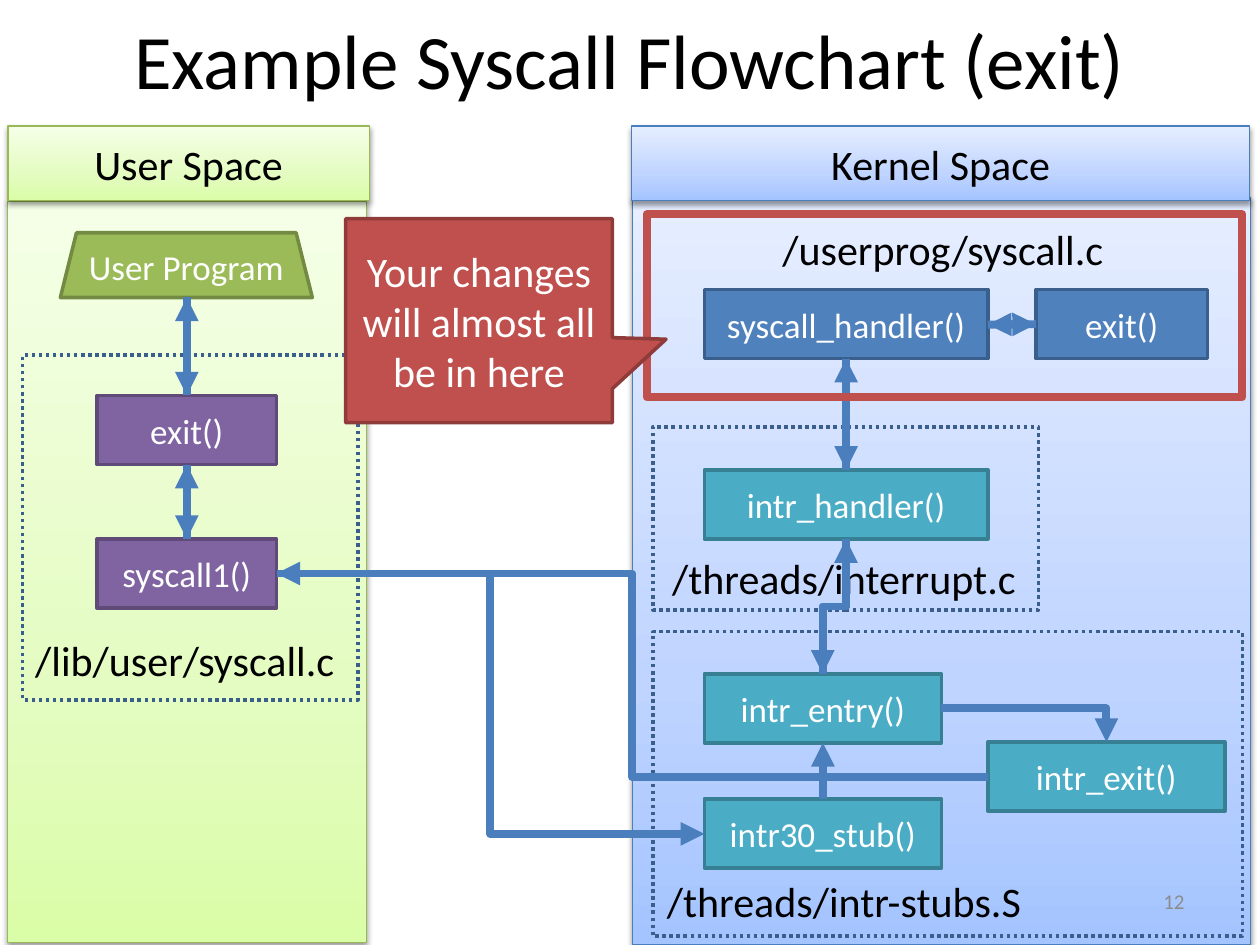
from copy import deepcopy
from lxml import etree
from pptx import Presentation
from pptx.dml.color import RGBColor
from pptx.enum.dml import MSO_LINE
from pptx.enum.shapes import MSO_CONNECTOR, MSO_SHAPE
from pptx.enum.text import MSO_ANCHOR, MSO_AUTO_SIZE, PP_ALIGN
from pptx.oxml.ns import qn
from pptx.util import Pt

RECT = MSO_SHAPE.RECTANGLE
TRAP = MSO_SHAPE.TRAPEZOID
CALL = MSO_SHAPE.RECTANGULAR_CALLOUT
LINE = MSO_CONNECTOR.STRAIGHT
BENT = MSO_CONNECTOR.ELBOW
DOTS = MSO_LINE.ROUND_DOT
MID, TOP = MSO_ANCHOR.MIDDLE, MSO_ANCHOR.TOP
LEFT, MIDST, RIGHT = PP_ALIGN.LEFT, PP_ALIGN.CENTER, PP_ALIGN.RIGHT
FIT = MSO_AUTO_SIZE.SHAPE_TO_FIT_TEXT

BLACK = RGBColor(0x00, 0x00, 0x00)
WHITE = RGBColor(0xFF, 0xFF, 0xFF)
GREY = RGBColor(0x8C, 0x8C, 0x8C)
WIRE = RGBColor(0x4B, 0x7E, 0xBC)
LEAF = RGBColor(0x98, 0xB9, 0x55)
GREEN = (RGBColor(0x9B, 0xBB, 0x59), RGBColor(0x73, 0x8A, 0x42))
PLUM = (RGBColor(0x80, 0x64, 0xA2), RGBColor(0x5F, 0x4A, 0x78))
TEAL = (RGBColor(0x4B, 0xAC, 0xC6), RGBColor(0x37, 0x7F, 0x92))
BLUE = (RGBColor(0x4F, 0x81, 0xBD), RGBColor(0x3A, 0x5F, 0x8C))
RED = (RGBColor(0xC0, 0x50, 0x4D), RGBColor(0x8E, 0x3B, 0x39))
LIME = (RGBColor(0xDA, 0xFD, 0xA7), RGBColor(0xE4, 0xFC, 0xC2), RGBColor(0xF5, 0xFF, 0xE7))
SKY = (RGBColor(0xA4, 0xC4, 0xFF), RGBColor(0xBF, 0xD4, 0xFF), RGBColor(0xE6, 0xEE, 0xFF))
STOPS = (0, 0.35, 1)

USER_X, KERN_X = 106.75, 483.5
STUB_X, COL = 470.25, 402.5
TALL = 39.5


def pts(vals):
    return [Pt(v) for v in vals]


def put(item, vals):
    for name, val in vals.items():
        setattr(item, name, val)


def write(frame, text, size, tint=WHITE, align=MIDST, anchor=MID, wrap=True):
    frame.text = text
    put(frame, {"word_wrap": wrap, "vertical_anchor": anchor})
    para = frame.paragraphs[0]
    para.alignment = align
    put(para.runs[0].font, {"name": "Calibri", "size": Pt(size)})
    para.runs[0].font.color.rgb = tint


def shape(slide, at, edge, width, kind=RECT):
    item = slide.shapes.add_shape(kind, *pts(at))
    item.shadow.inherit = False
    item.line.color.rgb = edge
    item.line.width = Pt(width)
    return item


def box(slide, text, at, hues, size=20, kind=RECT):
    item = shape(slide, at, hues[1], 2, kind)
    item.fill.solid()
    item.fill.fore_color.rgb = hues[0]
    write(item.text_frame, text, size)
    return item


def frame(slide, at, edge, width, dash=None):
    item = shape(slide, at, edge, width)
    item.fill.background()
    item.line.dash_style = dash


def panel(slide, at, tints, edge, text=None):
    item = shape(slide, at, edge, 0.75)
    item.fill.gradient()
    item.fill.gradient_angle = 90
    props = item._element.spPr
    stops = props.find(".//" + qn("a:gsLst"))
    stops.append(deepcopy(stops[0]))
    for stop, place, tint in zip(item.fill.gradient_stops, STOPS, tints):
        stop.position = place
        stop.color.rgb = tint
    glow = etree.SubElement(
        props.find(qn("a:effectLst")), qn("a:outerShdw"),
        blurRad=str(Pt(3.1)), dist=str(Pt(1.6)), dir="5400000", rotWithShape="0")
    shade = etree.SubElement(glow, qn("a:srgbClr"), val="000000")
    etree.SubElement(shade, qn("a:alpha"), val="38000")
    if text:
        write(item.text_frame, text, 24, BLACK)


def label(slide, text, at):
    item = slide.shapes.add_textbox(*pts(at))
    write(item.text_frame, text, 24, BLACK, LEFT, TOP, False)
    item.text_frame.auto_size = FIT


def link(slide, start, end, kind=LINE, turn=0, form=None):
    item = slide.shapes.add_connector(kind, *pts(start + end))
    put(item.line, {"width": Pt(4.5)})
    item.line.color.rgb = WIRE
    props = item._element.spPr
    etree.SubElement(item.line._get_or_add_ln(), qn("a:tailEnd"), type="triangle")
    etree.SubElement(props, qn("a:effectLst"))
    if turn:
        props.find(qn("a:xfrm")).set("rot", str(turn * 60000))
    if form:
        props.find(qn("a:prstGeom")).set("prst", form)


def both(slide, start, end, kind=LINE, turn=0):
    link(slide, start, end, kind, turn)
    link(slide, end, start, kind, turn)


def main():
    deck = Presentation()
    put(deck, {"slide_width": Pt(720), "slide_height": Pt(540)})
    slide = deck.slides.add_slide(deck.slide_layouts[5])

    head = slide.shapes.title
    put(head, dict(zip(("left", "top", "width", "height"), pts((36, 0, 648, 67.5)))))
    write(head.text_frame, "Example Syscall Flowchart (exit)", 44, BLACK)

    panel(slide, (4.5, 115, 205, 423.5), LIME, LEAF)
    panel(slide, (361.5, 113, 353, 427), SKY, WIRE)
    page = slide.shapes.add_textbox(*pts((516, 500.5, 168, 28.8)))
    write(page.text_frame, "12", 12, GREY, RIGHT)

    box(slide, "User Program", (34.5, 133, 144, 37), GREEN, kind=TRAP)
    for text, left, top, wide, hues in (
        ("exit()", 55.5, 226, 102.5, PLUM),
        ("syscall1()", 55.5, 308, 102.5, PLUM),
        ("intr30_stub()", COL, 456.5, 135.5, TEAL),
        ("intr_entry()", COL, 385, 135.5, TEAL),
        ("intr_handler()", COL, 268.5, 162, TEAL),
        ("syscall_handler()", COL, 165.5, 162, BLUE),
        ("exit()", 592, 165.5, 98, BLUE),
    ):
        box(slide, text, (left, top, wide, TALL), hues)

    for text, left, top, wide in (
        ("/lib/user/syscall.c", 13, 359, 187),
        ("/threads/intr-stubs.S", 374, 497, 220),
        ("/threads/interrupt.c", 377, 312, 213),
        ("/userprog/syscall.c", 440, 124, 199.5),
    ):
        label(slide, text, (left, top, wide, 36))

    for at in ((13, 203, 191.5, 197), (373, 361, 337, 174), (373, 244, 220.5, 104.5)):
        frame(slide, at, BLUE[1], 2, DOTS)

    link(slide, (158, 327.75), (COL, 476.5), BENT)
    panel(slide, (4.5, 72, 206.5, 42.5), LIME, LEAF, "User Space")
    panel(slide, (361, 72, 353, 42.5), SKY, WIRE, "Kernel Space")
    box(slide, "intr_exit()", (564.5, 424, 135.5, TALL), TEAL)

    both(slide, (USER_X, 170), (USER_X, 226))
    both(slide, (USER_X, 265.5), (USER_X, 308))
    both(slide, (KERN_X, 205), (KERN_X, 268.5))
    both(slide, (564.5, 185.5), (592, 185.25))
    both(slide, (438.25, 340), (515.25, 353.25), BENT, 90)
    link(slide, (STUB_X, 456.5), (STUB_X, 424.5))
    link(slide, (538, 404.75), (632.25, 424), BENT, form="bentConnector2")
    link(slide, (564.5, 444), (158, 327.75), BENT)

    frame(slide, (369.5, 122.5, 340.5, 104.5), RED[0], 4.5)
    note = box(slide, "Your changes will almost all be in here",
               (197.5, 125, 152.5, 116.5), RED, 24, CALL)
    note.adjustments[0] = 0.701
    note.adjustments[1] = 0.091
    deck.save("out.pptx")


if __name__ == "__main__":
    main()
